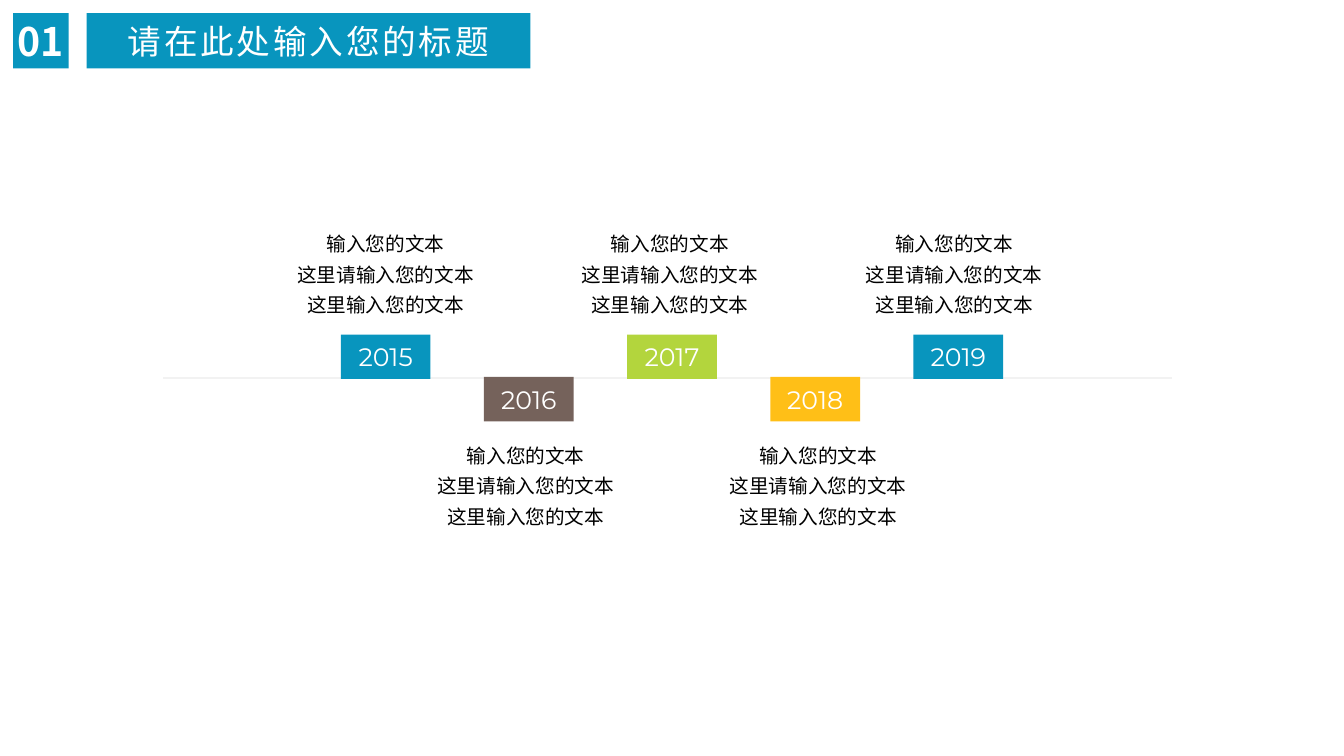
from dataclasses import dataclass

from lxml.etree import SubElement
from pptx import Presentation
from pptx.dml.color import RGBColor as RGB
from pptx.enum.shapes import MSO_CONNECTOR as Link, MSO_SHAPE as Shape
from pptx.enum.text import MSO_ANCHOR as Anchor, MSO_AUTO_SIZE as Fit, PP_ALIGN as Align
from pptx.oxml.ns import qn
from pptx.util import Inches, Pt

NUMBER = "01"
TITLE = "请在此处输入您的标题"
NOTE = ["输入您的文本", "这里请输入您的文本", "这里输入您的文本"]


@dataclass(frozen=True)
class Theme:
    blue: str = "0895BE"
    brown: str = "75625B"
    green: str = "B3D53D"
    amber: str = "FFBF17"
    rule: str = "F2F2F2"
    ink: str = "000000"
    paper: str = "FFFFFF"
    head: str = "Noto Sans CJK SC"
    label: str = "Montserrat"
    body: str = "Arial"
    num_size: int = 28
    head_size: int = 24
    year_size: int = 18
    note_size: int = 14


T = Theme()

# Year, box colour, left edge of its note; odd years stand above the line
YEARS = [
    ("2015", T.blue, 2.89),
    ("2016", T.brown, 4.28),
    ("2017", T.green, 5.71),
    ("2018", T.amber, 7.18),
    ("2019", T.blue, 8.53),
]
START, STEP = 3.38, 1.42
BOX_W, BOX_H = 0.89, 0.44
NOTE_W, NOTE_H = 1.87, 0.91
BOX_TOPS = (3.32, 3.74)
NOTE_TOPS = (2.23, 4.33)
AXIS = (1.62, 11.62, 3.75)
BAR_TOP, BAR_H = 0.13, 0.55


def write(shape, lines, font, size, color, bold=False, anchor=Anchor.MIDDLE,
          inset=None, leading=None, spacing=None):
    """Fill the shape with centred lines; inset in inches, spacing in points."""
    frame = shape.text_frame
    frame.word_wrap = True
    frame.auto_size = Fit.NONE
    frame.vertical_anchor = anchor
    if inset is not None:
        frame.margin_left = frame.margin_right = Inches(inset)
        frame.margin_top = frame.margin_bottom = Inches(inset)
    for i, line in enumerate(lines):
        para = frame.paragraphs[0] if i == 0 else frame.add_paragraph()
        para.alignment = Align.CENTER
        if leading:
            para.line_spacing = leading
        run = para.add_run()
        run.text = line
        run.font.name, run.font.size, run.font.bold = font, Pt(size), bold
        run.font.color.rgb = RGB.from_string(color)
        props = run._r.get_or_add_rPr()
        SubElement(props, qn("a:ea")).set("typeface", T.head)
        if spacing:
            props.set("spc", str(spacing * 100))


def paint(shape, color):
    shape.fill.solid()
    shape.fill.fore_color.rgb = RGB.from_string(color)
    shape.line.fill.background()


def add_box(slide, left, top, width, height, color):
    box = slide.shapes.add_shape(
        Shape.RECTANGLE, Inches(left), Inches(top), Inches(width), Inches(height))
    box.shadow.inherit = False
    paint(box, color)
    return box


def add_head(slide):
    box = add_box(slide, 0.13, BAR_TOP, BAR_H, BAR_H, T.blue)
    write(box, [NUMBER], T.head, T.num_size, T.paper, bold=True, inset=0)
    title = slide.shapes.title
    title.left, title.top = Inches(0.86), Inches(BAR_TOP)
    title.width, title.height = Inches(4.4), Inches(BAR_H)
    paint(title, T.blue)
    write(title, [TITLE], T.head, T.head_size, T.paper, spacing=2)


def add_axis(slide):
    left, right, y = map(Inches, AXIS)
    axis = slide.shapes.add_connector(Link.STRAIGHT, left, y, right, y)
    axis.line.color.rgb = RGB.from_string(T.rule)
    axis.line.width = Pt(1.75)
    SubElement(axis._element.spPr, qn("a:effectLst"))


def add_year(slide, i, year, color, note_x):
    side = i % 2
    box = add_box(slide, START + i * STEP, BOX_TOPS[side], BOX_W, BOX_H, color)
    write(box, [year], T.label, T.year_size, T.paper)
    note = slide.shapes.add_textbox(
        Inches(note_x), Inches(NOTE_TOPS[side]), Inches(NOTE_W), Inches(NOTE_H))
    write(note, NOTE, T.body, T.note_size, T.ink, inset=0, leading=1.3,
          anchor=Anchor.TOP if side else Anchor.BOTTOM)


def main():
    deck = Presentation()
    deck.slide_width, deck.slide_height = Inches(13.33), Inches(7.5)
    slide = deck.slides.add_slide(deck.slide_layouts[5])
    add_head(slide)
    add_axis(slide)
    for i, item in enumerate(YEARS):
        add_year(slide, i, *item)
    deck.save("out.pptx")


if __name__ == "__main__":
    main()
